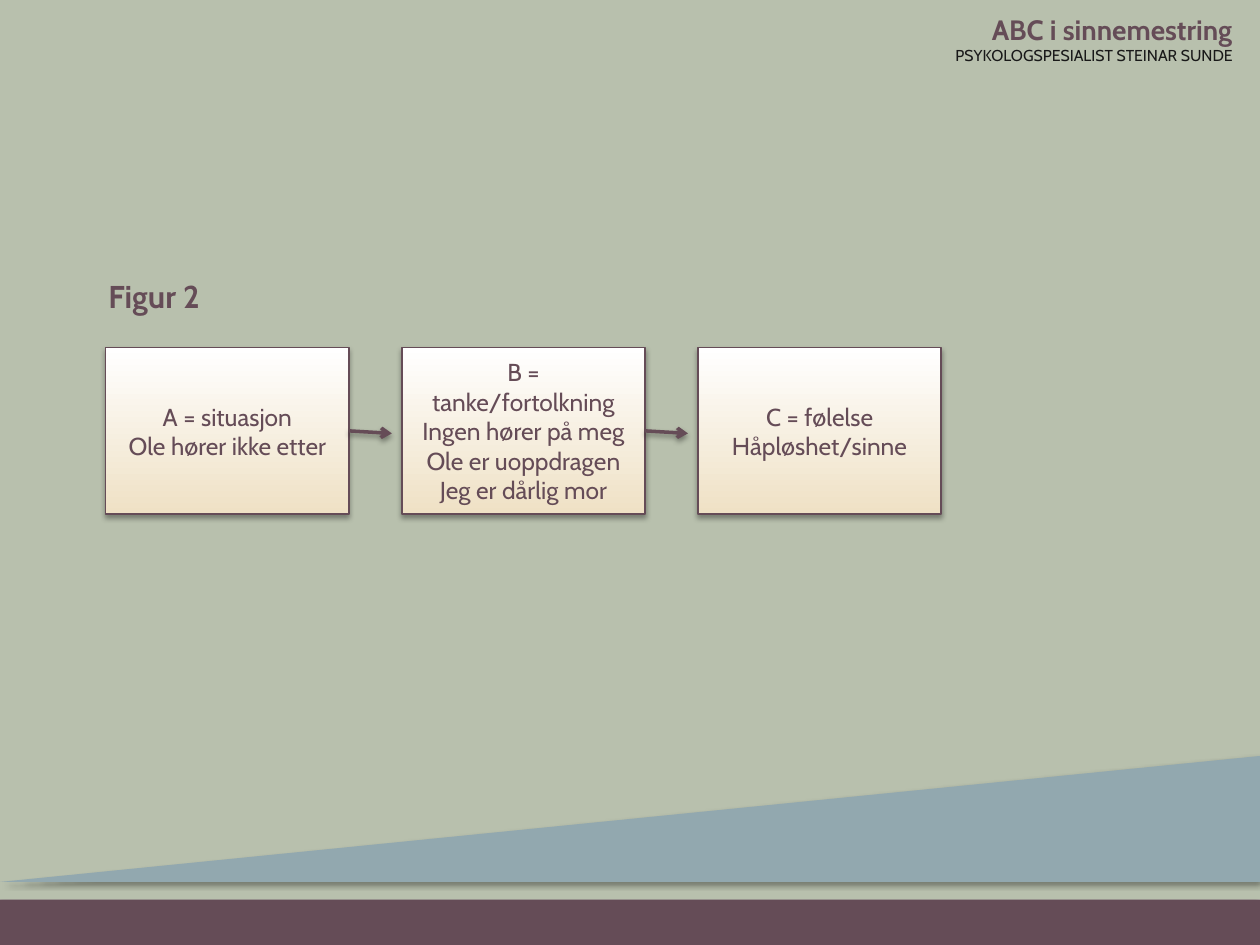
from lxml import etree
from pptx import Presentation
from pptx.dml.color import RGBColor
from pptx.enum.shapes import MSO_CONNECTOR, MSO_SHAPE
from pptx.enum.text import MSO_ANCHOR, PP_ALIGN
from pptx.oxml import parse_xml
from pptx.oxml.ns import qn
from pptx.util import Inches, Pt

RECT = MSO_SHAPE.RECTANGLE
LINE = MSO_CONNECTOR.STRAIGHT
TOP, MID = MSO_ANCHOR.TOP, MSO_ANCHOR.MIDDLE
LEFT, RIGHT, MIDDLE = PP_ALIGN.LEFT, PP_ALIGN.RIGHT, PP_ALIGN.CENTER
SAGE = RGBColor(0xB8, 0xC0, 0xAD)
BLUE = RGBColor(0x92, 0xA8, 0xAF)
PLUM = RGBColor(0x65, 0x4C, 0x57)
INK = RGBColor(0x19, 0x19, 0x19)
CREAM = RGBColor(0xEF, 0xE1, 0xC5)
WHITE = RGBColor(0xFF, 0xFF, 0xFF)
FONT = "Cabin"
NS = "http://schemas.openxmlformats.org/drawingml/2006/main"

TITLE = "Figur 2"
HEAD = [("ABC i sinnemestring", 16, PLUM, True),
        ("PSYKOLOGSPESIALIST STEINAR SUNDE", 9, INK, False)]
STEPS = [
    ["A = situasjon\nOle hører ikke etter"],
    ["B = tanke/fortolkning", "Ingen hører på meg",
     "Ole er uoppdragen", "Jeg er dårlig mor"],
    ["C = følelse", "Håpløshet/sinne"],
]
WIDE, HIGH = 10, 7.5
FLOOR = 7.14
WAVE = [(-0.01, 6.81), (10, 6.14), (10, 7.48), (0, 7.48)]
BOX_X, BOX_Y, BOX_W, BOX_H = 0.84, 2.76, 1.93, 1.32
PITCH = 2.35
REACH, DROP = 0.34, 0.02


def shade(shape, alpha=35, dist=1.8):
    shape._element.spPr.append(parse_xml(
        f'<a:effectLst xmlns:a="{NS}"><a:outerShdw blurRad="{Pt(3.1)}" '
        f'dist="{Pt(dist)}" dir="5400000" rotWithShape="0">'
        f'<a:srgbClr val="000000"><a:alpha val="{alpha * 1000}"/></a:srgbClr>'
        '</a:outerShdw></a:effectLst>'))


def paint(shape, color):
    shape.fill.solid()
    shape.fill.fore_color.rgb = color
    shape.line.fill.background()


def block(x, y, w, h):
    return slide.shapes.add_shape(
        RECT, Inches(x), Inches(y), Inches(w), Inches(h))


def write(frame, rows, align, anchor):
    frame.word_wrap = True
    frame.vertical_anchor = anchor
    for i, (text, size, color, bold) in enumerate(rows):
        para = frame.add_paragraph() if i else frame.paragraphs[0]
        para.text = text
        para.alignment = align
        font = para.font
        font.name, font.size, font.bold = FONT, Pt(size), bold
        font.color.rgb = color


deck = Presentation()
deck.slide_width, deck.slide_height = Inches(WIDE), Inches(HIGH)
slide = deck.slides.add_slide(deck.slide_layouts[5])

panel = block(0, 0, WIDE, FLOOR)
paint(panel, SAGE)
shade(panel)

pen = slide.shapes.build_freeform(*WAVE[0], scale=Inches(1))
pen.add_line_segments(WAVE[1:], close=True)
wave = pen.convert_to_shape()
paint(wave, BLUE)
shade(wave)

head = slide.shapes.add_textbox(
    Inches(7.28), Inches(0.05), Inches(2.6), Inches(0.54))
write(head.text_frame, HEAD, RIGHT, TOP)

floor = block(0, FLOOR, WIDE, HIGH - FLOOR)
paint(floor, PLUM)
floor.shadow.inherit = False

for i, lines in enumerate(STEPS):
    box = block(BOX_X + i * PITCH, BOX_Y, BOX_W, BOX_H)
    box.fill.gradient()
    box.fill.gradient_angle = 90
    for stop, color in zip(box.fill.gradient_stops, (CREAM, WHITE)):
        stop.color.rgb = color
    box.line.color.rgb = PLUM
    box.line.width = Pt(0.75)
    shade(box)
    write(box.text_frame, [(text, 14, PLUM, False) for text in lines],
          MIDDLE, MID)

for i in range(len(STEPS) - 1):
    x, y = BOX_X + BOX_W + i * PITCH, BOX_Y + BOX_H / 2
    arrow = slide.shapes.add_connector(
        LINE, Inches(x), Inches(y), Inches(x + REACH), Inches(y + DROP))
    arrow.line.color.rgb = PLUM
    arrow.line.width = Pt(2)
    etree.SubElement(arrow.line._get_or_add_ln(), qn("a:tailEnd"), type="arrow")
    shade(arrow, 38, 1.6)

title = slide.shapes.title
title.left, title.top = Inches(0.76), Inches(2.15)
title.width, title.height = Inches(6.63), Inches(0.4)
write(title.text_frame, [(TITLE, 18, PLUM, True)], LEFT, TOP)
slide.shapes._spTree.append(title._element)

deck.save("out.pptx")
